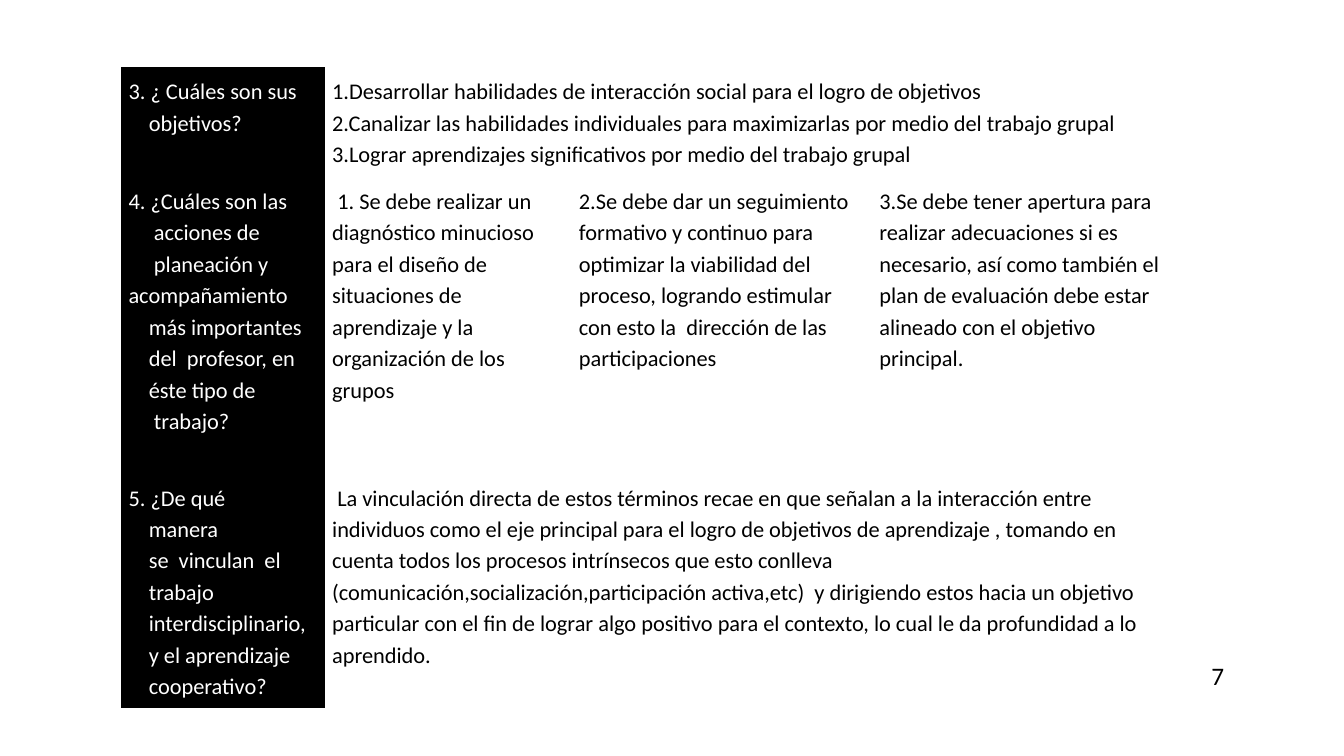
from pptx import Presentation
from pptx import util as u
from pptx.dml.color import RGBColor
from pptx.enum import text

COLORS = {"question": "000000", "question_text": "FFFFFF", "answer_text": "000000"}
NO_GRID_STYLE = "{2D5ABB26-0587-4C30-8999-92F81FD0307C}"
COLUMN_WIDTHS = (5.13, 6.22, 7.57, 7.57)

# Each line is (first-line indent in cm, text).
# Each row is (height in cm, question lines, answers as lists of lines).
ROWS = [
    (2.74,
     [(0, "3. ¿ Cuáles son sus"), (0.51, "objetivos?")],
     [[(0, "1.Desarrollar habilidades de interacción social para el logro de objetivos"),
       (0, "2.Canalizar las habilidades individuales para maximizarlas por medio del trabajo grupal"),
       (0, "3.Lograr aprendizajes significativos por medio del trabajo grupal")]]),
    (7.48,
     [(0, "4. ¿Cuáles son las"), (0.64, "acciones de"),
      (0.64, "planeación y acompañamiento"), (0.51, "más importantes"),
      (0.51, "del  profesor, en"), (0.51, "éste tipo de"), (0.64, "trabajo?")],
     [[(0.13, "1. Se debe realizar un diagnóstico minucioso para el diseño de "
              "situaciones de aprendizaje y la organización de los grupos")],
      [(0, "2.Se debe dar un seguimiento formativo y continuo para optimizar la "
           "viabilidad del proceso, logrando estimular con esto la  dirección de "
           "las participaciones")],
      [(0, "3.Se debe tener apertura para realizar adecuaciones si es necesario, "
           "así como también el plan de evaluación debe estar alineado con el "
           "objetivo principal.")]]),
    (5.92,
     [(0, "5. ¿De qué"), (0.51, "manera"), (0.51, "se  vinculan  el"),
      (0.51, "trabajo"), (0.51, "interdisciplinario,"),
      (0.51, "y el aprendizaje"), (0.51, "cooperativo?")],
     [[(0.13, "La vinculación directa de estos términos recae en que señalan a la "
              "interacción entre individuos como el eje principal para el logro de "
              "objetivos de aprendizaje , tomando en cuenta todos los procesos "
              "intrínsecos que esto conlleva (comunicación,socialización,"
              "participación activa,etc)  y dirigiendo estos hacia un objetivo "
              "particular con el fin de lograr algo positivo para el contexto, lo "
              "cual le da profundidad a lo aprendido.")]]),
]


def write(tf, lines, *, font, size, color, spacing=None):
    """Fill a text frame with (first-line indent, text) lines."""
    for i, (indent, line) in enumerate(lines):
        p = tf.paragraphs[0] if i == 0 else tf.add_paragraph()
        p.line_spacing = spacing
        if indent:
            pPr = p._p.get_or_add_pPr()
            pPr.set("marL", "0")
            pPr.set("indent", str(u.Cm(indent)))
        r = p.add_run()
        r.text = line
        r.font.name = font
        r.font.size = u.Pt(size)
        r.font.color.rgb = RGBColor.from_string(color)


class SlideBuilder:
    """Holds the text style and the slide being filled."""

    font = "Calibri"
    body_size = 16
    number_size = 18
    line_spacing = 1.15
    cell_margin = u.Cm(0.19)

    def __init__(self, slide):
        self.slide = slide

    def cell(self, cell, lines, color, fill=None):
        cell.margin_left = cell.margin_right = self.cell_margin
        cell.margin_top = cell.margin_bottom = self.cell_margin
        cell.vertical_anchor = text.MSO_ANCHOR.TOP
        if fill:
            cell.fill.solid()
            cell.fill.fore_color.rgb = RGBColor.from_string(fill)
        else:
            cell.fill.background()
        write(cell.text_frame, lines, font=self.font, size=self.body_size,
              color=color, spacing=self.line_spacing)

    def question_table(self, left, top, widths, rows):
        """Add a table of questions; a lone answer spans all answer columns."""
        height = sum(row[0] for row in rows)
        table = self.slide.shapes.add_table(
            len(rows), len(widths), u.Cm(left), u.Cm(top),
            u.Cm(sum(widths)), u.Cm(height)).table
        table.first_row = table.horz_banding = False
        table._tbl.tblPr[0].text = NO_GRID_STYLE
        for column, width in zip(table.columns, widths):
            column.width = u.Cm(width)
        for i, (row_height, question, answers) in enumerate(rows):
            table.rows[i].height = u.Cm(row_height)
            self.cell(table.cell(i, 0), question,
                      COLORS["question_text"], COLORS["question"])
            if len(answers) == 1:
                table.cell(i, 1).merge(table.cell(i, len(widths) - 1))
            for j, answer in enumerate(answers, start=1):
                self.cell(table.cell(i, j), answer, COLORS["answer_text"])

    def page_number(self, number, left, top, width, height):
        sp = self.slide.shapes.add_textbox(
            u.Cm(left), u.Cm(top), u.Cm(width), u.Cm(height))
        tf = sp.text_frame
        tf.word_wrap = False
        tf.auto_size = text.MSO_AUTO_SIZE.SHAPE_TO_FIT_TEXT
        write(tf, [(0, str(number))], font=self.font, size=self.number_size,
              color=COLORS["answer_text"])


def main():
    prs = Presentation()
    prs.slide_width, prs.slide_height = u.Cm(33.87), u.Cm(19.05)
    s = SlideBuilder(prs.slides.add_slide(prs.slide_layouts[6]))
    s.question_table(3.05, 1.68, COLUMN_WIDTHS, ROWS)
    s.page_number(7, 30.28, 16.51, 0.84, 1.02)
    prs.save("out.pptx")


if __name__ == "__main__":
    main()
